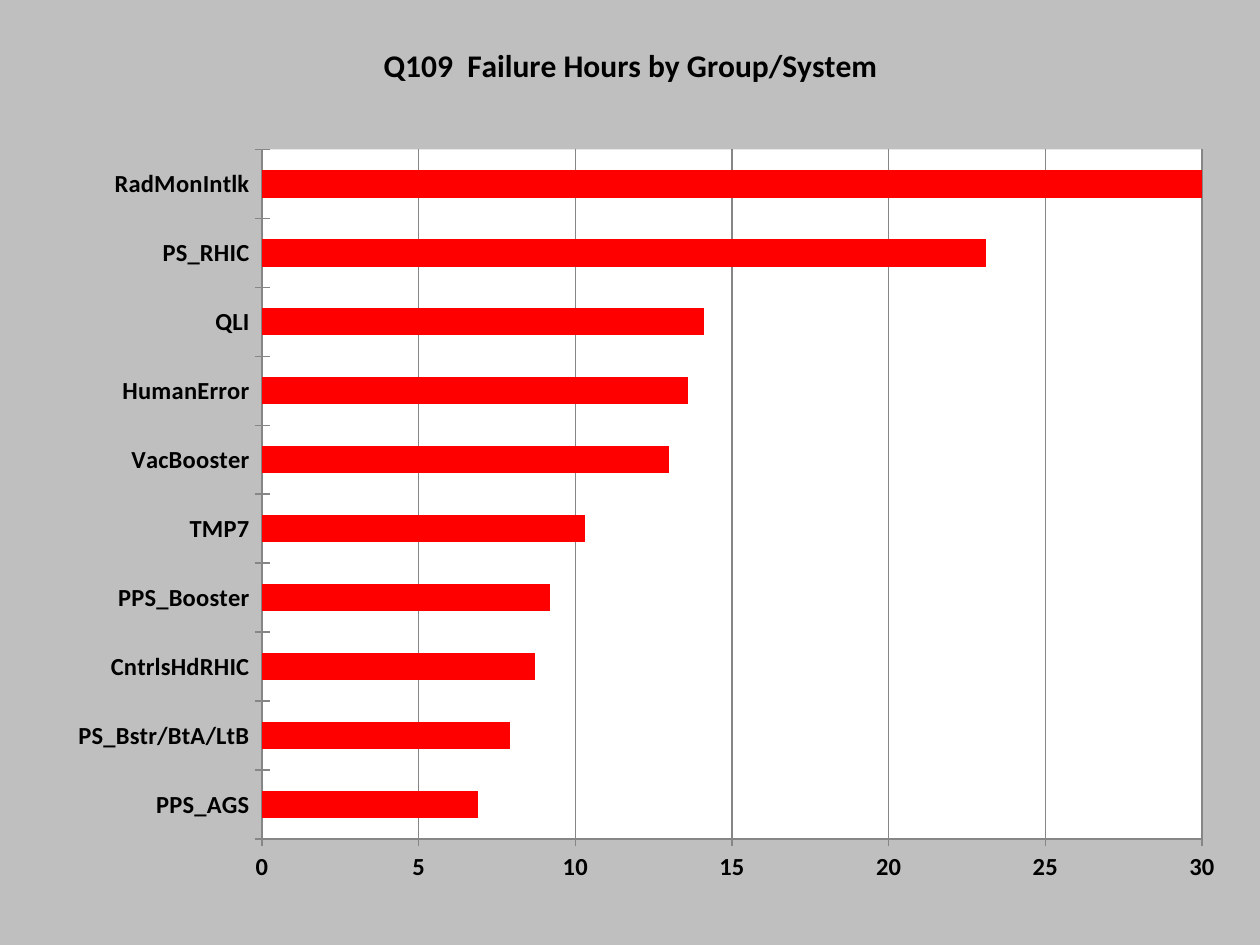
from pptx import Presentation
from pptx.chart.data import CategoryChartData
from pptx.dml.color import RGBColor
from pptx.enum.chart import XL_CHART_TYPE, XL_TICK_MARK
from pptx.oxml import parse_xml
from pptx.oxml.ns import nsdecls, qn
from pptx.util import Inches, Pt

BAR_CLUSTERED = XL_CHART_TYPE.BAR_CLUSTERED
TICK_CROSS = XL_TICK_MARK.CROSS
FONT = "Calibri"
COLORS = {
    "background": "BFBFBF",
    "plot": "FFFFFF",
    "bar": "FF0000",
    "line": "868686",
    "text": "000000",
}
FAILURE_HOURS = {
    "PPS_AGS": 6.9,
    "PS_Bstr/BtA/LtB": 7.9,
    "CntrlsHdRHIC": 8.7,
    "PPS_Booster": 9.2,
    "TMP7": 10.3,
    "VacBooster": 13,
    "HumanError": 13.6,
    "QLI": 14.1,
    "PS_RHIC": 23.1,
    "RadMonIntlk": 30.4,
}


def color(name):
    return RGBColor.from_string(COLORS[name])


def format_font(font, size, bold):
    font.name = FONT
    font.size = Pt(size)
    font.bold = bold
    font.color.rgb = color("text")


def format_line(line):
    line.color.rgb = color("line")
    line.width = Pt(0.75)


def area_fill(name):
    """Return chart shape properties with a solid fill and no outline."""
    return parse_xml(
        f'<c:spPr {nsdecls("c", "a")}><a:solidFill>'
        f'<a:srgbClr val="{COLORS[name]}"/></a:solidFill>'
        "<a:ln><a:noFill/></a:ln></c:spPr>"
    )


def set_layout(element, position, **settings):
    """Place a chart part by fractions of the chart area."""
    for layout in element.findall(qn("c:layout")):
        element.remove(layout)
    values = "".join(f'<c:{key} val="{value}"/>' for key, value in settings.items())
    element.insert(position, parse_xml(
        f'<c:layout {nsdecls("c")}><c:manualLayout>{values}</c:manualLayout></c:layout>'
    ))


def add_title(chart, text):
    title = chart.chart_title
    run = title.text_frame.paragraphs[0].add_run()
    run.text = text
    format_font(run.font, 18, True)
    set_layout(title.element, 1, xMode="edge", yMode="edge", x=0.3, y=0.04)


def format_axis(axis):
    axis.major_tick_mark = TICK_CROSS
    format_font(axis.tick_labels.font, 14, True)
    format_line(axis.format.line)


def add_failure_chart(slide, left, top, width, height):
    data = CategoryChartData(number_format="0.0")
    data.categories = list(FAILURE_HOURS)
    data.add_series("Series 1", list(FAILURE_HOURS.values()))
    chart = slide.shapes.add_chart(BAR_CLUSTERED, left, top, width, height, data).chart
    chart.has_legend = False
    format_font(chart.font, 10, False)
    add_title(chart, "Q109  Failure Hours by Group/System ")

    # Bars
    plot = chart.plots[0]
    plot.gap_width = 150
    plot.vary_by_categories = False
    fill = plot.series[0].format.fill
    fill.solid()
    fill.fore_color.rgb = color("bar")

    # Axes and gridlines
    hours_axis = chart.value_axis
    for axis in (chart.category_axis, hours_axis):
        format_axis(axis)
    hours_axis.minimum_scale = 0
    hours_axis.maximum_scale = 30
    hours_axis.major_unit = 5
    hours_axis.tick_labels.number_format = "0"
    hours_axis.tick_labels.number_format_is_linked = False
    hours_axis.has_major_gridlines = True
    format_line(hours_axis.major_gridlines.format.line)

    # Plot position and backgrounds
    chart_element = chart.element.find(qn("c:chart"))
    plot_area = chart_element.find(qn("c:plotArea"))
    set_layout(plot_area, 0, layoutTarget="inner", xMode="edge", yMode="edge",
               x=0.208, y=0.158, w=0.746, h=0.73)
    plot_area.append(area_fill("plot"))
    chart_element.addnext(area_fill("background"))


def main():
    presentation = Presentation()
    presentation.slide_width = Inches(10)
    presentation.slide_height = Inches(7.5)
    slide = presentation.slides.add_slide(presentation.slide_layouts[6])
    add_failure_chart(slide, Inches(0), Inches(0), Inches(10), Inches(7.5))
    presentation.save("out.pptx")


if __name__ == "__main__":
    main()
